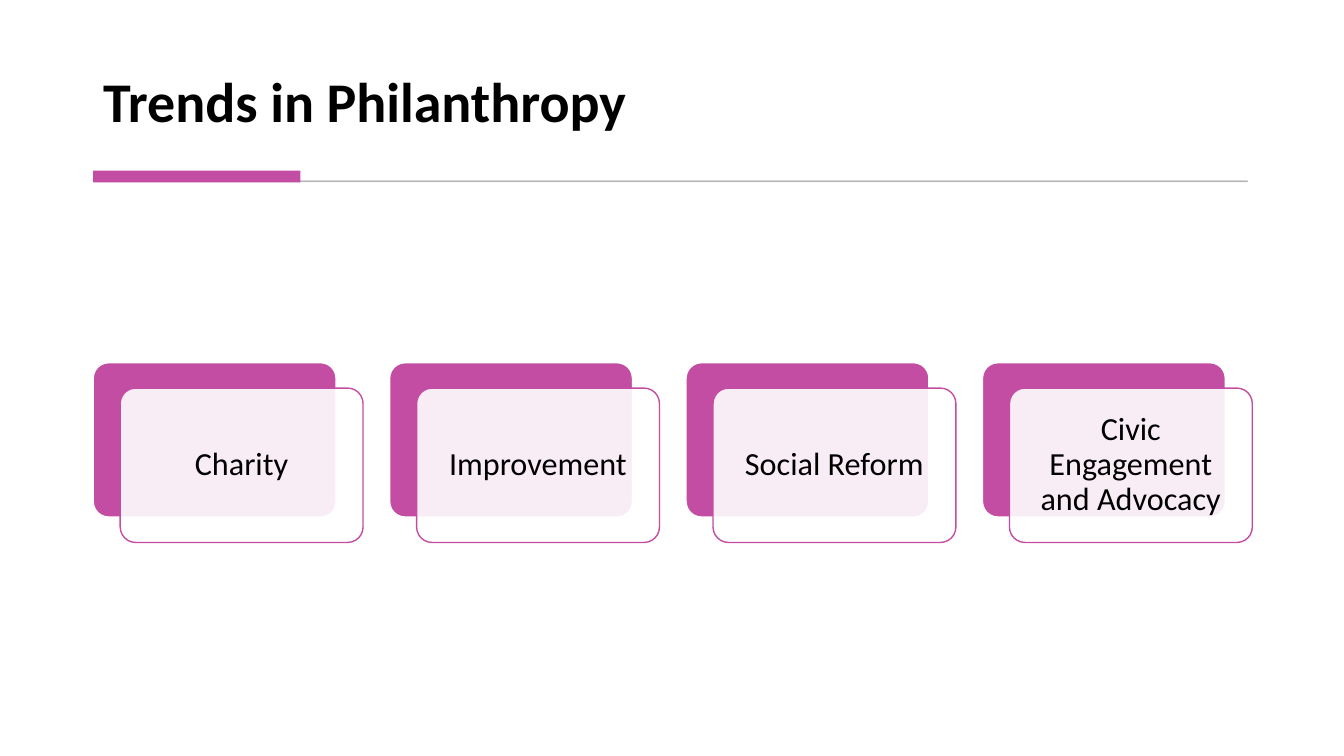
from lxml.etree import SubElement
from pptx import Presentation
from pptx.dml.color import RGBColor
from pptx.enum.shapes import MSO_SHAPE
from pptx.enum.text import MSO_ANCHOR, PP_ALIGN
from pptx.oxml.ns import qn
from pptx.util import Cm, Pt

ACCENT = "C34DA2"
WHITE = "FFFFFF"
GRAY = "595959"


def paint(color_format, color, opacity=100):
    color_format.rgb = RGBColor.from_string(color)
    if opacity < 100:
        for node in color_format._xFill.iter(qn("a:srgbClr")):
            SubElement(node, qn("a:alpha"), val=str(opacity * 1000))


def write(shape, text, size, bold=False, align=PP_ALIGN.LEFT,
          anchor=MSO_ANCHOR.MIDDLE, font="Calibri", color="000000",
          side=0.25, top=0.25):
    frame = shape.text_frame
    frame.word_wrap = True
    frame.vertical_anchor = anchor
    frame.margin_left = frame.margin_right = Cm(side)
    frame.margin_top = frame.margin_bottom = Cm(top)
    para = frame.paragraphs[0]
    para.alignment = align
    para.line_spacing = 0.9
    span = para.add_run()
    span.text = text
    span.font.name = font
    span.font.size = Pt(size)
    span.font.bold = bold
    paint(span.font.color, color)


class TrendSlide:
    def __init__(self, deck):
        self.page = deck.slides.add_slide(deck.slide_layouts[6])

    def title(self, text, left, top, width, height):
        box = self.page.shapes.add_textbox(Cm(left), Cm(top), Cm(width), Cm(height))
        write(box, text, 40, bold=True, anchor=MSO_ANCHOR.BOTTOM, top=0.13)

    def block(self, left, top, width, height, fill, line=None, line_width=1,
              fill_opacity=100, line_opacity=100, kind=MSO_SHAPE.RECTANGLE):
        shape = self.page.shapes.add_shape(kind, Cm(left), Cm(top), Cm(width), Cm(height))
        shape.shadow.inherit = False
        if kind == MSO_SHAPE.ROUNDED_RECTANGLE:
            shape.adjustments[0] = 0.1
        shape.fill.solid()
        paint(shape.fill.fore_color, fill, fill_opacity)
        if line:
            shape.line.width = Pt(line_width)
            shape.line.fill.solid()
            paint(shape.line.fill.fore_color, line, line_opacity)
        else:
            shape.line.fill.background()
        return shape

    def card(self, text, left, top, width=6.12, height=3.89):
        rounded = MSO_SHAPE.ROUNDED_RECTANGLE
        self.block(left, top, width, height, ACCENT, WHITE, kind=rounded)
        front = self.block(left + 0.68, top + 0.64, width, height, WHITE, ACCENT,
                           fill_opacity=90, kind=rounded)
        write(front, text, 23, align=PP_ALIGN.CENTER)


def main():
    deck = Presentation()
    deck.slide_width = Cm(33.87)
    deck.slide_height = Cm(19.05)
    slide = TrendSlide(deck)
    slide.title("Trends in Philanthropy", 2.35, 0.71, 29.18, 2.82)
    slide.block(2.41, 4.56, 29.03, 0.02, GRAY, GRAY, 0.75, 30, 30)
    slide.block(2.35, 4.3, 5.22, 0.3, ACCENT)
    trends = ["Charity", "Improvement", "Social Reform", "Civic Engagement and Advocacy"]
    for index, trend in enumerate(trends):
        slide.card(trend, 2.35 + index * 7.47, 9.14)
    deck.save("out.pptx")


if __name__ == "__main__":
    main()
